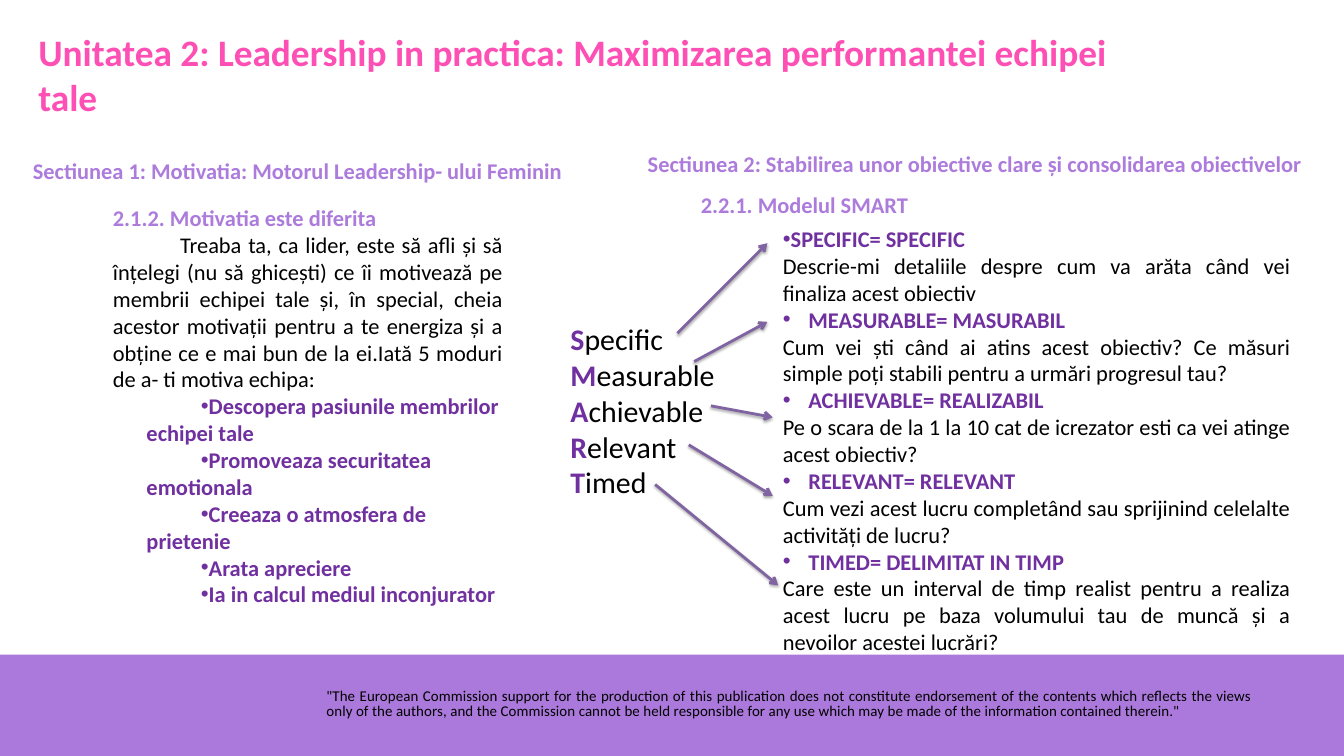
from dataclasses import dataclass
from typing import NamedTuple, Optional

from lxml.etree import SubElement
from pptx import Presentation
from pptx.dml.color import RGBColor as RGB
from pptx.enum.shapes import MSO_CONNECTOR as Connector, MSO_SHAPE as Preset
from pptx.enum.text import MSO_ANCHOR as Anchor, MSO_AUTO_SIZE as AutoSize, PP_ALIGN as Align
from pptx.oxml import parse_xml
from pptx.oxml.ns import nsdecls, qn
from pptx.util import Inches, Pt


@dataclass(frozen=True)
class Theme:
    font: str = "Calibri"
    pink: RGB = RGB(0xFD, 0x4F, 0xB4)
    lilac: RGB = RGB(0xAC, 0x7B, 0xDC)
    band: RGB = RGB(0xAB, 0x79, 0xDB)
    purple: RGB = RGB(0x70, 0x30, 0xA0)
    arrow: RGB = RGB(0x80, 0x64, 0xA2)
    black: RGB = RGB(0, 0, 0)
    title: int = 40
    acronym: int = 32
    body: int = 24
    note: int = 16


THEME = Theme()


class Box(NamedTuple):
    left: float
    top: float
    width: float
    height: float


class Piece(NamedTuple):
    text: str
    color: RGB
    bold: bool = True


class Para(NamedTuple):
    pieces: list[Piece]
    align: Align = Align.JUSTIFY
    margin: float = 0
    indent: float = 0
    bullet: bool = False
    level: int = 0


class Arrow(NamedTuple):
    x1: float
    y1: float
    x2: float
    y2: float


def place(shape, box: Box) -> None:
    for side, length in box._asdict().items():
        setattr(shape, side, Inches(length))


def write(shape, paras: list[Para], size: int, anchor: Anchor = Anchor.TOP,
          wrap: bool = True, spacing: Optional[float] = None) -> None:
    """Fill a placeholder or text box with formatted paragraphs."""
    frame = shape.text_frame
    frame_format = {"word_wrap": wrap, "auto_size": AutoSize.SHAPE_TO_FIT_TEXT,
                    "vertical_anchor": anchor}
    for name, value in frame_format.items():
        setattr(frame, name, value)
    for i, para in enumerate(paras):
        line = frame.paragraphs[0] if i == 0 else frame.add_paragraph()
        properties = line._p.get_or_add_pPr()
        properties.set("marL", str(Inches(para.margin)))
        properties.set("indent", str(Inches(para.indent)))
        if para.bullet:
            SubElement(properties, qn("a:buFont")).set("typeface", "Arial")
            SubElement(properties, qn("a:buChar")).set("char", "•")
        else:
            SubElement(properties, qn("a:buNone"))
        line_format = {"level": para.level, "alignment": para.align, "space_before": Pt(0),
                       "line_spacing": Pt(spacing) if spacing else 1.0}
        for name, value in line_format.items():
            setattr(line, name, value)
        for piece in para.pieces:
            run = line.add_run()
            run.text = piece.text
            for name, value in {"name": THEME.font, "size": Pt(size), "bold": piece.bold}.items():
                setattr(run.font, name, value)
            run.font.color.rgb = piece.color


def add_text(slide, box: Box, paras: list[Para], size: int, **options):
    label = slide.shapes.add_textbox(*map(Inches, box))
    write(label, paras, size, **options)
    return label


def add_arrow(slide, arrow: Arrow) -> None:
    pointer = slide.shapes.add_connector(Connector.STRAIGHT, *map(Inches, arrow))
    pointer.line.color.rgb = THEME.arrow
    pointer.line.width = Pt(3)
    SubElement(pointer.line._get_or_add_ln(), qn("a:tailEnd")).set("type", "arrow")
    pointer._element.spPr.append(parse_xml(
        f'<a:effectLst {nsdecls("a")}><a:outerShdw blurRad="{Pt(3.1)}" dist="{Pt(1.8)}" '
        'dir="5400000" rotWithShape="0"><a:srgbClr val="000000"><a:alpha val="35000"/>'
        '</a:srgbClr></a:outerShdw></a:effectLst>'))


def heading(text: str, align: Align = Align.JUSTIFY) -> Para:
    return Para([Piece(text, THEME.lilac)], align)


def plain(text: str, indent: float = 0) -> Para:
    return Para([Piece(text, THEME.black, False)], indent=indent)


TITLE = "Unitatea 2: Leadership in practica: Maximizarea performantei echipei tale"
DISCLAIMER = (
    '"The European Commission support for the production of this publication does not constitute '
    "endorsement of the contents which reflects the views only of the authors, and the Commission "
    "cannot be held responsible for any use which may be made of the information contained "
    'therein."')
MOTIVATION = (
    "Treaba ta, ca lider, este să afli și să înțelegi (nu să ghicești) ce îi motivează pe membrii "
    "echipei tale și, în special, cheia acestor motivații pentru a te energiza și a obține ce e mai "
    "bun de la ei.Iată 5 moduri de a- ti motiva echipa:")
WAYS = ["Descopera pasiunile membrilor echipei tale", "Promoveaza securitatea emotionala",
        "Creeaza o atmosfera de prietenie", "Arata apreciere", "Ia in calcul mediul inconjurator"]
SMART = ["Specific", "Measurable", "Achievable", "Relevant", "Timed"]
GOALS = [
    ("SPECIFIC= SPECIFIC",
     "Descrie-mi detaliile despre cum va arăta când vei finaliza acest obiectiv"),
    ("MEASURABLE= MASURABIL",
     "Cum vei ști când ai atins acest obiectiv? Ce măsuri simple poți stabili pentru a urmări "
     "progresul tau?"),
    ("ACHIEVABLE= REALIZABIL",
     "Pe o scara de la 1 la 10 cat de icrezator esti ca vei atinge acest obiectiv?"),
    ("RELEVANT= RELEVANT",
     "Cum vezi acest lucru completând sau sprijinind celelalte activități de lucru?"),
    ("TIMED= DELIMITAT IN TIMP",
     "Care este un interval de timp realist pentru a realiza acest lucru pe baza volumului tau de "
     "muncă și a nevoilor acestei lucrări?"),
]
ARROWS = [Arrow(10.08, 4.96, 11.42, 3.62), Arrow(10.33, 5.38, 11.42, 4.79),
          Arrow(10.58, 6.04, 11.5, 6.21), Arrow(10.25, 6.62, 11.5, 7.38),
          Arrow(9.75, 7.21, 11.58, 8.71)]


def main() -> None:
    deck = Presentation()
    deck.slide_width, deck.slide_height = Inches(20), Inches(11.25)
    slide = deck.slides.add_slide(deck.slide_layouts[3])
    title, motivation, goals = slide.placeholders

    # Footer band with the disclaimer
    band = slide.shapes.add_shape(Preset.RECTANGLE, *map(Inches, Box(0, 9.74, 20, 1.51)))
    band.shadow.inherit = False
    band.fill.solid()
    band.fill.fore_color.rgb = THEME.band
    band.line.fill.background()
    disclaimer = add_text(slide, Box(4.75, 10.21, 14, 0.55),
                          [Para([Piece(DISCLAIMER, THEME.black, False)], margin=0.01)],
                          THEME.note, spacing=16.1)
    disclaimer.text_frame.paragraphs[0].runs[0].font._element.set("spc", "10")

    # Title
    place(title, Box(0.47, 0.39, 16.42, 1.45))
    write(title, [Para([Piece(TITLE, THEME.pink)], Align.LEFT)], THEME.title)

    # Section 1: motivation
    add_text(slide, Box(0.39, 2.29, 8.16, 0.5),
             [heading("Sectiunea 1: Motivatia: Motorul Leadership- ului Feminin")],
             THEME.body, wrap=False)
    ways = [Para([Piece(way, THEME.purple)], Align.LEFT, 0.5, 0.81, True, 1) for way in WAYS]
    place(motivation, Box(1.58, 2.96, 6, 6.16))
    write(motivation, [heading("2.1.2. Motivatia este diferita"), plain(MOTIVATION, 1), *ways],
          THEME.body, anchor=Anchor.MIDDLE)

    # Section 2: the SMART model
    add_text(slide, Box(9.54, 2.18, 10.03, 0.5),
             [heading("Sectiunea 2: Stabilirea unor obiective clare și consolidarea obiectivelor",
                      Align.LEFT)], THEME.body, wrap=False)
    add_text(slide, Box(10.33, 2.79, 4.67, 0.5), [heading("2.2.1. Modelul SMART")], THEME.body)
    acronym = [Para([Piece(word[0], THEME.purple), Piece(word[1:], THEME.black, False)],
                    margin=0.81) for word in SMART]
    add_text(slide, Box(7.58, 4.71, 3.58, 2.79), acronym, THEME.acronym, anchor=Anchor.MIDDLE)

    goal_lines = []
    for i, (name, question) in enumerate(GOALS):
        hang = 0.38 if i else 0
        goal_lines += [Para([Piece(name, THEME.purple)], margin=hang, indent=-hang, bullet=True),
                       plain(question)]
    place(goals, Box(11.55, 3.3, 7.75, 6.56))
    write(goals, goal_lines, THEME.body)

    # Arrows from each word to its goal
    for arrow in ARROWS:
        add_arrow(slide, arrow)

    deck.save("out.pptx")


if __name__ == "__main__":
    main()
